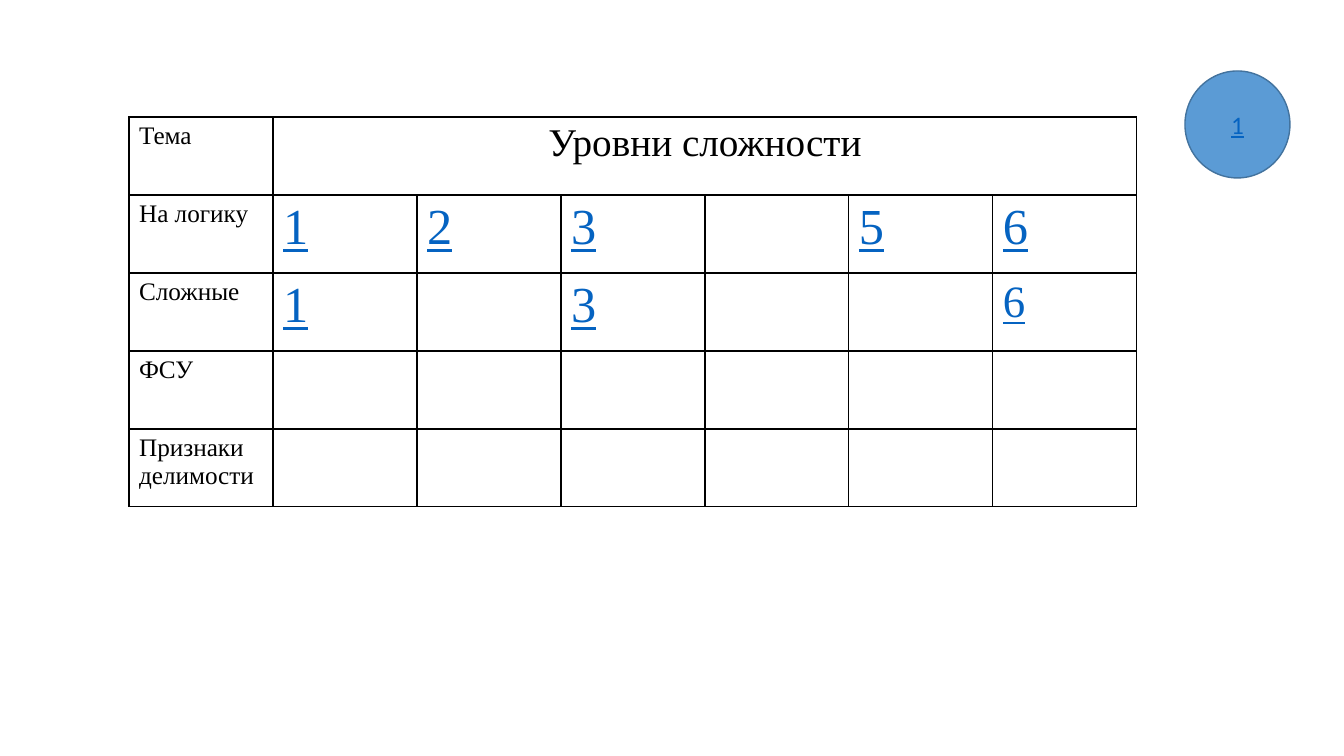
"""Build a slide with a table of topics by difficulty level and a round button."""
import pptx
import pptx.util
import pptx.dml.color
import pptx.enum.shapes
import pptx.enum.text
import pptx.oxml

PX = 914400 / 100.8
BLACK, LINK = "000000", "0563C1"
ALIGN = pptx.enum.text.PP_ALIGN
NS = 'xmlns:a="http://schemas.openxmlformats.org/drawingml/2006/main"'


def px(*lengths):
    return [pptx.util.Emu(round(n * PX)) for n in lengths]


def write(tf, text, size, color, align=ALIGN.LEFT, font="Times New Roman"):
    p = tf.paragraphs[0]
    p.alignment = align
    r = p.add_run()
    r.text = text
    style = {"name": font, "size": pptx.util.Pt(size), "bold": False, "underline": color == LINK}
    for key, value in style.items():
        setattr(r.font, key, value)
    r.font.color.rgb = pptx.dml.color.RGBColor.from_string(color)


prs = pptx.Presentation()
prs.slide_width, prs.slide_height = px(1344, 756)
s = prs.slides.add_slide(prs.slide_layouts[6])

rows = [
    ["Тема", "Уровни сложности", "", "", "", "", ""],
    ["На логику", "1", "2", "3", "", "5", "6"],
    ["Сложные", "1", "", "3", "", "", "6"],
    ["ФСУ", "", "", "", "", "", ""],
    ["Признаки делимости", "", "", "", "", "", ""],
]
table = s.shapes.add_table(5, 7, *px(129, 117, 1008, 390)).table
for flag in ("first_row", "horz_banding"):
    setattr(table, flag, False)
for col in table.columns:
    col.width = px(144)[0]
for row in table.rows:
    row.height = px(78)[0]
table.cell(0, 1).merge(table.cell(0, 6))

for i, row in enumerate(rows):
    for j, text in enumerate(row):
        cell = table.cell(i, j)
        tcPr = cell._tc.get_or_add_tcPr()
        for side in "LRTB":
            tcPr.append(pptx.oxml.parse_xml(
                f'<a:ln{side} {NS} w="12700"><a:solidFill><a:srgbClr val="{BLACK}"/>'
                f'</a:solidFill></a:ln{side}>'))
        cell.fill.background()
        if not text:
            continue
        if j == 0:
            write(cell.text_frame, text, 18, BLACK)
        elif i == 0:
            write(cell.text_frame, text, 28, BLACK, ALIGN.CENTER)
        else:
            write(cell.text_frame, text, 32 if (i, j) == (2, 6) else 36, LINK)

sp = s.shapes.add_shape(pptx.enum.shapes.MSO_SHAPE.OVAL, *px(1185, 71, 105, 107))
sp.shadow.inherit = False
sp.fill.solid()
sp.fill.fore_color.rgb = pptx.dml.color.RGBColor.from_string("5B9BD5")
sp.line.color.rgb = pptx.dml.color.RGBColor.from_string("43739E")
sp.line.width = pptx.util.Pt(1)
sp.text_frame.vertical_anchor = pptx.enum.text.MSO_ANCHOR.MIDDLE
write(sp.text_frame, "1", 18, LINK, ALIGN.CENTER, "Calibri")

prs.save("out.pptx")
